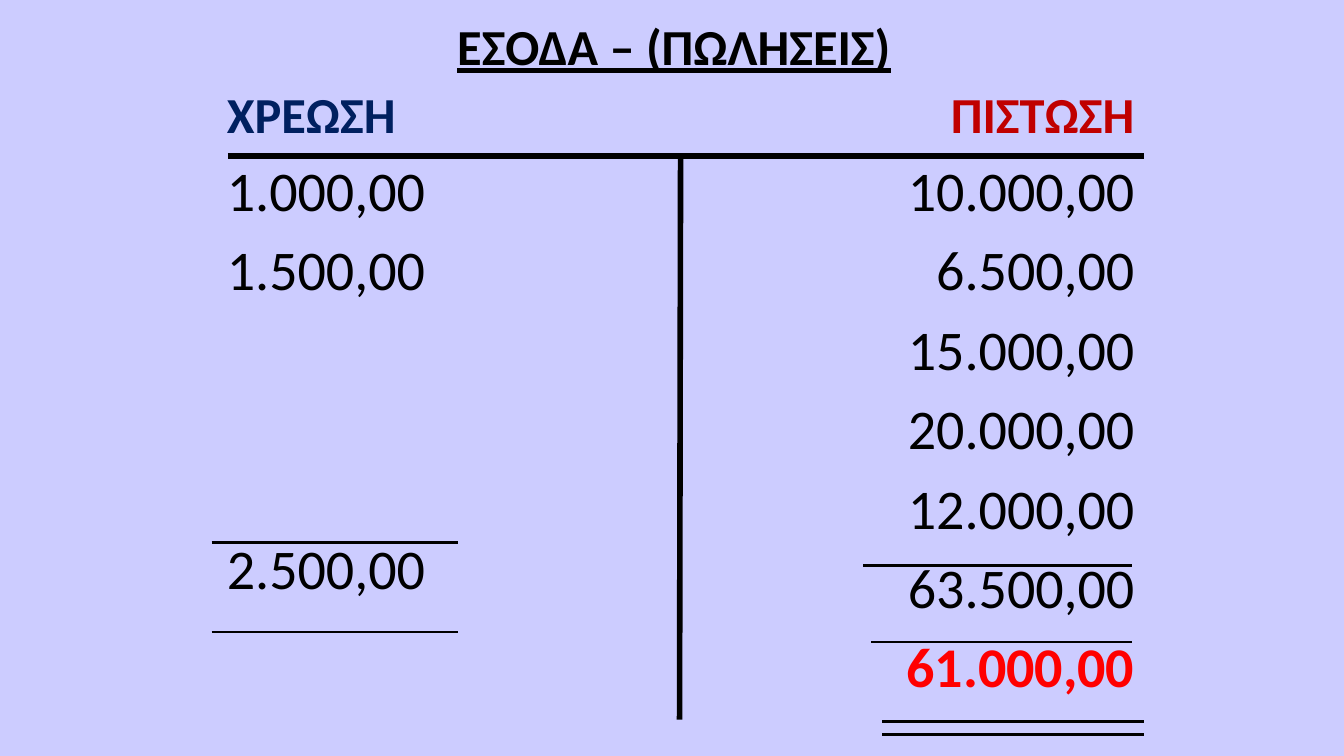
from dataclasses import dataclass

from lxml import etree
from pptx import Presentation
from pptx import util as u
from pptx.dml.color import RGBColor
from pptx.enum import shapes, text
from pptx.oxml import parse_xml
from pptx.oxml.ns import qn

NAMESPACE = "http://schemas.openxmlformats.org/drawingml/2006/main"


@dataclass(frozen=True)
class Theme:
    font: str = "Calibri"
    background: str = "CCCCFF"
    ink: str = "000000"
    debit: str = "002060"
    credit: str = "C00000"
    balance: str = "FF0000"
    heading_size: int = 36
    amount_size: int = 40
    axis_width: int = 4
    rule_width: int = 2


theme = Theme()
SHADOW = (f'<a:effectLst xmlns:a="{NAMESPACE}"><a:outerShdw blurRad="38100" dist="19050" '
          'dir="2700000" algn="tl"><a:srgbClr val="000000"><a:alpha val="40000"/></a:srgbClr>'
          '</a:outerShdw></a:effectLst>')


def add_text(slide, box, rows, alignment, anchor=text.MSO_ANCHOR.TOP, underline=False):
    """Rows hold wording, size, colour, bold and space before."""
    shape = slide.shapes.add_textbox(*map(u.Inches, box))
    frame = shape.text_frame
    frame.word_wrap = True
    frame.vertical_anchor = anchor
    frame.margin_left = u.Inches(0.15)
    for index, (wording, size, color, bold, space_before) in enumerate(rows):
        paragraph = frame.paragraphs[0] if index == 0 else frame.add_paragraph()
        paragraph.text = wording
        paragraph.alignment = alignment
        paragraph.line_spacing = 0.9
        paragraph.space_before = u.Pt(space_before)
        paragraph.space_after = u.Pt(6)
        font = paragraph.font
        font.name, font.size = theme.font, u.Pt(size)
        font.bold, font.underline = bold, underline
        font.color.rgb = RGBColor.from_string(color)
        fill = paragraph._p.pPr.find(qn("a:defRPr")).find(qn("a:solidFill"))
        fill.addnext(parse_xml(SHADOW))


def add_line(slide, start, end, width):
    line = slide.shapes.add_connector(
        shapes.MSO_CONNECTOR.STRAIGHT, *map(u.Inches, start + end))
    line.line.color.rgb = RGBColor.from_string(theme.ink)
    line.line.width = u.Pt(width)
    etree.SubElement(line._element.spPr, qn("a:effectLst"))


presentation = Presentation()
presentation.slide_width = u.Inches(13.33)
presentation.slide_height = u.Inches(7.5)
slide = presentation.slides.add_slide(presentation.slide_layouts[6])
slide.background.fill.solid()
slide.background.fill.fore_color.rgb = RGBColor.from_string(theme.background)

# Title
add_text(slide, (2.41, 0.13, 8.5, 0.71),
         [("ΕΣΟΔΑ – (ΠΩΛΗΣΕΙΣ)", theme.heading_size, theme.ink, True, 0)],
         text.PP_ALIGN.CENTER, text.MSO_ANCHOR.MIDDLE, underline=True)

# Debit side: the total sits lower, above its closing rule
debit_rows = [("ΧΡΕΩΣΗ", theme.heading_size, theme.debit, True, 0)]
for amount, gap in (("1.000,00", 7.5), ("1.500,00", 7.5), ("2.500,00", 164)):
    debit_rows.append((amount, theme.amount_size, theme.ink, False, gap))
add_text(slide, (2.1, 0.84, 4.49, 6.3), debit_rows, text.PP_ALIGN.LEFT)

# Credit side: entries, total and balance
credit_rows = [("ΠΙΣΤΩΣΗ", theme.heading_size, theme.credit, True, 0)]
for amount in ("10.000,00", "6.500,00", "15.000,00", "20.000,00", "12.000,00", "63.500,00"):
    credit_rows.append((amount, theme.amount_size, theme.ink, False, 7.5))
credit_rows.append(("61.000,00", theme.amount_size, theme.balance, True, 7.5))
add_text(slide, (6.9, 0.84, 4.45, 6.46), credit_rows, text.PP_ALIGN.RIGHT)

# The T of the account
add_line(slide, (6.75, 1.55), (6.74, 7.14), theme.axis_width)
add_line(slide, (2.26, 1.55), (11.35, 1.55), theme.axis_width)

# Rules around totals, with a double rule under the balance
for left, right, y in (
    (2.1, 4.54, 5.38), (2.1, 4.54, 6.27),
    (8.56, 11.23, 5.61), (8.64, 11.23, 6.37),
    (8.75, 11.35, 7.16), (8.75, 11.35, 7.29),
):
    add_line(slide, (left, y), (right, y), theme.rule_width)

presentation.save("out.pptx")
